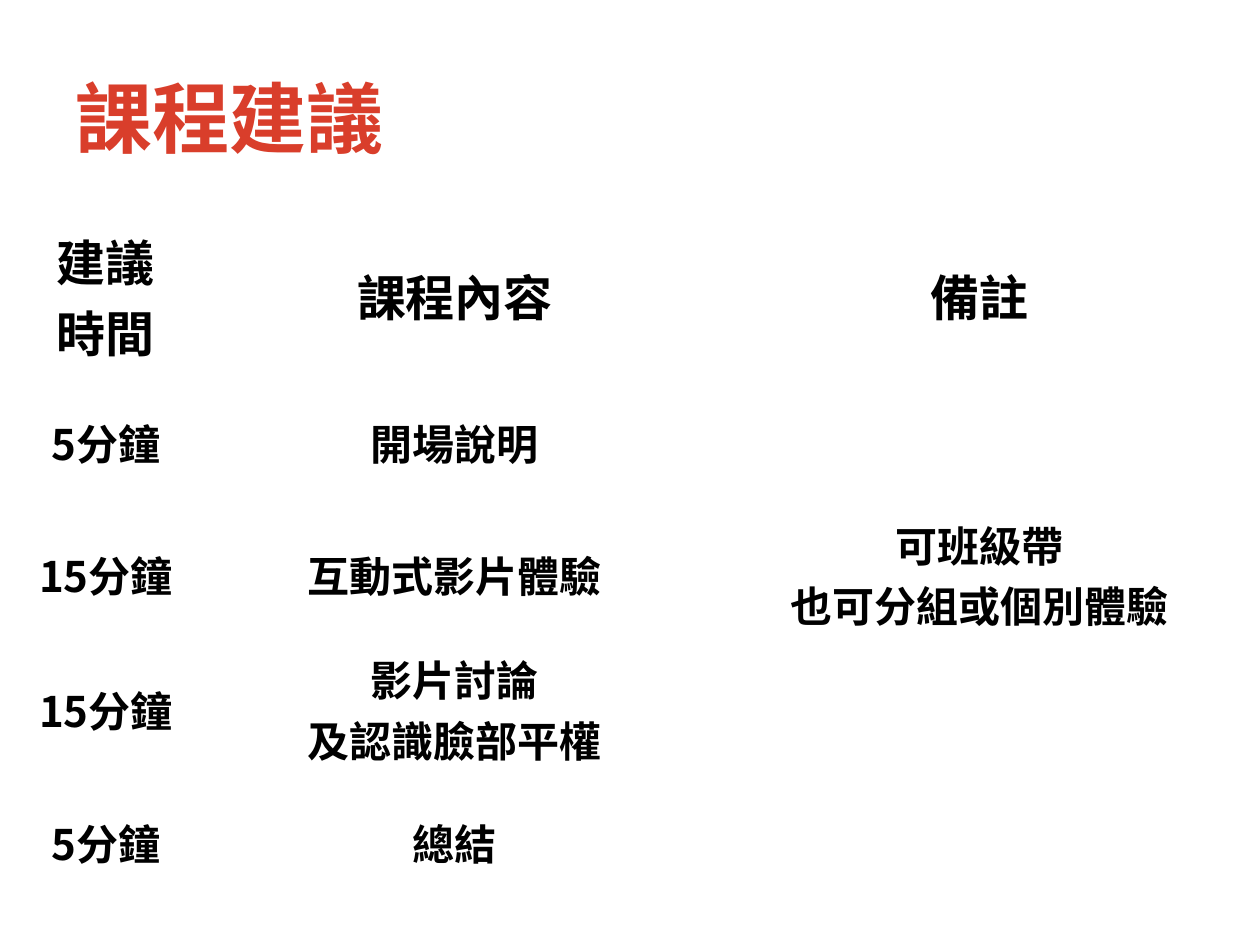
from lxml.etree import SubElement
from pptx import Presentation
from pptx.dml.color import RGBColor
from pptx.enum.text import MSO_ANCHOR, PP_ALIGN
from pptx.oxml.ns import qn
from pptx.util import Cm, Pt

# Content: each cell is a list of paragraphs
TITLE = "課程建議"
SCHEDULE = [
    [["建議", "時間"], ["課程內容"], ["備註"]],
    [["5分鐘"], ["開場說明"], []],
    [["15分鐘"], ["互動式影片體驗"], ["可班級帶", "也可分組或個別體驗"]],
    [["15分鐘"], ["影片討論\v及認識臉部平權"], []],
    [["5分鐘"], ["總結"], []],
]

# Theme and layout (lengths in cm)
THEME = {
    "font": "Noto Sans CJK TC",
    "accent": RGBColor(0xD9, 0x3E, 0x2B),
    "text": RGBColor(0, 0, 0),
    "title": Pt(44),
    "header": Pt(28),
    "body": Pt(24),
}
COLUMN_WIDTHS = [3.25, 10.82, 10.34]
ROW_HEIGHTS = [3.28, 2.62, 2.67, 2.72, 2.67]
PLAIN_TABLE_STYLE = "{2D5ABB26-0587-4C30-8999-92F81FD0307C}"


def format_paragraph(para, size, color, align):
    para.alignment = align
    font = para.font
    font.name, font.size, font.bold = THEME["font"], size, True
    font.color.rgb = color
    # East Asian typeface
    properties = para._p.pPr.find(qn("a:defRPr"))
    SubElement(properties, qn("a:ea"), typeface=THEME["font"])


def fill_cell(cell, lines, size):
    cell.fill.background()
    cell.vertical_anchor = MSO_ANCHOR.MIDDLE
    frame = cell.text_frame
    for index, line in enumerate(lines):
        para = frame.add_paragraph() if index else frame.paragraphs[0]
        para.text = line
        format_paragraph(para, size, THEME["text"], PP_ALIGN.CENTER)


def main():
    deck = Presentation()
    deck.slide_width, deck.slide_height = Cm(25.4), Cm(19.05)
    page = deck.slides.add_slide(deck.slide_layouts[5])

    # Title
    title = page.shapes.title
    title.left, title.top = Cm(1.27), Cm(0.76)
    title.width, title.height = Cm(22.86), Cm(3.18)
    title.text_frame.text = TITLE
    title.text_frame.vertical_anchor = MSO_ANCHOR.MIDDLE
    format_paragraph(title.text_frame.paragraphs[0], THEME["title"],
                     THEME["accent"], PP_ALIGN.LEFT)

    # Schedule table, without grid or banding
    frame = page.shapes.add_table(
        len(ROW_HEIGHTS), len(COLUMN_WIDTHS), Cm(0.51), Cm(4.32),
        Cm(sum(COLUMN_WIDTHS)), Cm(sum(ROW_HEIGHTS)))
    table = frame.table
    table.first_row = table.horz_banding = False
    table._tbl.tblPr.find(qn("a:tableStyleId")).text = PLAIN_TABLE_STYLE
    for column, width in zip(table.columns, COLUMN_WIDTHS):
        column.width = Cm(width)
    for row, height, contents in zip(table.rows, ROW_HEIGHTS, SCHEDULE):
        row.height = Cm(height)
        size = THEME["header"] if contents is SCHEDULE[0] else THEME["body"]
        for cell, lines in zip(row.cells, contents):
            fill_cell(cell, lines, size)

    deck.save("out.pptx")


if __name__ == "__main__":
    main()
